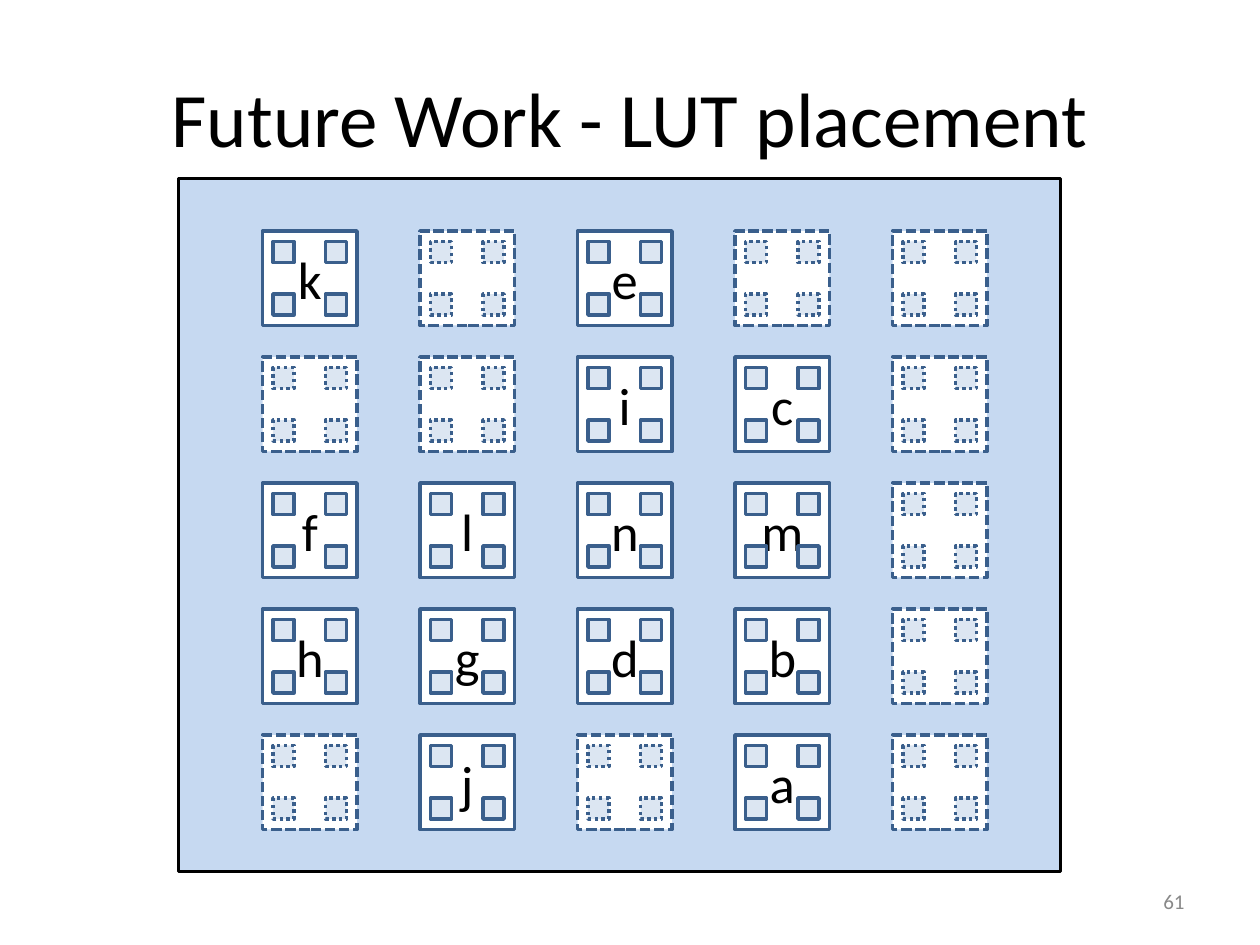
from dataclasses import dataclass
from itertools import product

from pptx import Presentation
from pptx.dml.color import RGBColor
from pptx.enum.dml import MSO_LINE
from pptx.enum.shapes import MSO_SHAPE
from pptx.enum.text import MSO_ANCHOR, PP_ALIGN
from pptx.shapes.autoshape import Shape
from pptx.slide import Slide
from pptx.util import Pt

RECT = MSO_SHAPE.RECTANGLE
SOLID, DASH, DOT = MSO_LINE.SOLID, MSO_LINE.SQUARE_DOT, MSO_LINE.ROUND_DOT
MIDDLE = MSO_ANCHOR.MIDDLE
CENTER, RIGHT = PP_ALIGN.CENTER, PP_ALIGN.RIGHT


@dataclass(frozen=True)
class Theme:
    font: str = "Calibri"
    black: str = "000000"
    white: str = "FFFFFF"
    gray: str = "898989"
    panel: str = "C6D9F1"
    pin: str = "DCE6F2"
    edge: str = "3A5F8C"
    title: float = 44
    label: float = 30
    number: float = 12
    line: float = 2


@dataclass(frozen=True)
class Box:
    left: float
    top: float
    width: float
    height: float


@dataclass(frozen=True)
class Cell:
    box: Box
    label: str


THEME = Theme()
ROWS = ("k-e--", "--ic-", "flnm-", "hgdb-", "-j-a-")
LEFT, TOP = 150, 132
STEP_X, STEP_Y = 90, 72
SIDE = 54
PIN = 12
INSETS = (6, 36)


def write(shape: Shape, text: str, size: float, color: str, align: PP_ALIGN) -> None:
    frame = shape.text_frame
    frame.word_wrap = True
    frame.vertical_anchor = MIDDLE
    para = frame.paragraphs[0]
    para.text = text
    para.alignment = align
    para.font.name = THEME.font
    para.font.size = Pt(size)
    para.font.color.rgb = RGBColor.from_string(color)


def add_text(slide: Slide, box: Box, text: str, size: float, color: str,
             align: PP_ALIGN) -> None:
    shape = slide.shapes.add_textbox(
        Pt(box.left), Pt(box.top), Pt(box.width), Pt(box.height))
    write(shape, text, size, color, align)


def add_box(slide: Slide, box: Box, fill: str, edge: str, dash: MSO_LINE) -> Shape:
    shape = slide.shapes.add_shape(
        RECT, Pt(box.left), Pt(box.top), Pt(box.width), Pt(box.height))
    shape.shadow.inherit = False
    shape.fill.solid()
    shape.fill.fore_color.rgb = RGBColor.from_string(fill)
    shape.line.color.rgb = RGBColor.from_string(edge)
    shape.line.width = Pt(THEME.line)
    if dash != SOLID:
        shape.line.dash_style = dash
    return shape


def add_cell(slide: Slide, cell: Cell) -> None:
    used = cell.label != "-"
    box = cell.box
    shape = add_box(slide, box, THEME.white, THEME.edge, SOLID if used else DASH)
    if used:
        write(shape, cell.label, THEME.label, THEME.black, CENTER)
    for down, over in product(INSETS, INSETS):
        pin = Box(box.left + over, box.top + down, PIN, PIN)
        add_box(slide, pin, THEME.pin, THEME.edge, SOLID if used else DOT)


def main() -> None:
    deck = Presentation()
    deck.slide_width, deck.slide_height = Pt(720), Pt(540)
    slide = deck.slides.add_slide(deck.slide_layouts[6])
    add_text(slide, Box(36, 21.6, 648, 90), "Future Work - LUT placement",
             THEME.title, THEME.black, CENTER)
    add_text(slide, Box(516, 500.5, 168, 28.75), "61",
             THEME.number, THEME.gray, RIGHT)
    add_box(slide, Box(102, 102, 504, 396), THEME.panel, THEME.black, SOLID)
    for row, labels in enumerate(ROWS):
        for col, label in enumerate(labels):
            box = Box(LEFT + col * STEP_X, TOP + row * STEP_Y, SIDE, SIDE)
            add_cell(slide, Cell(box, label))
    deck.save("out.pptx")


if __name__ == "__main__":
    main()
